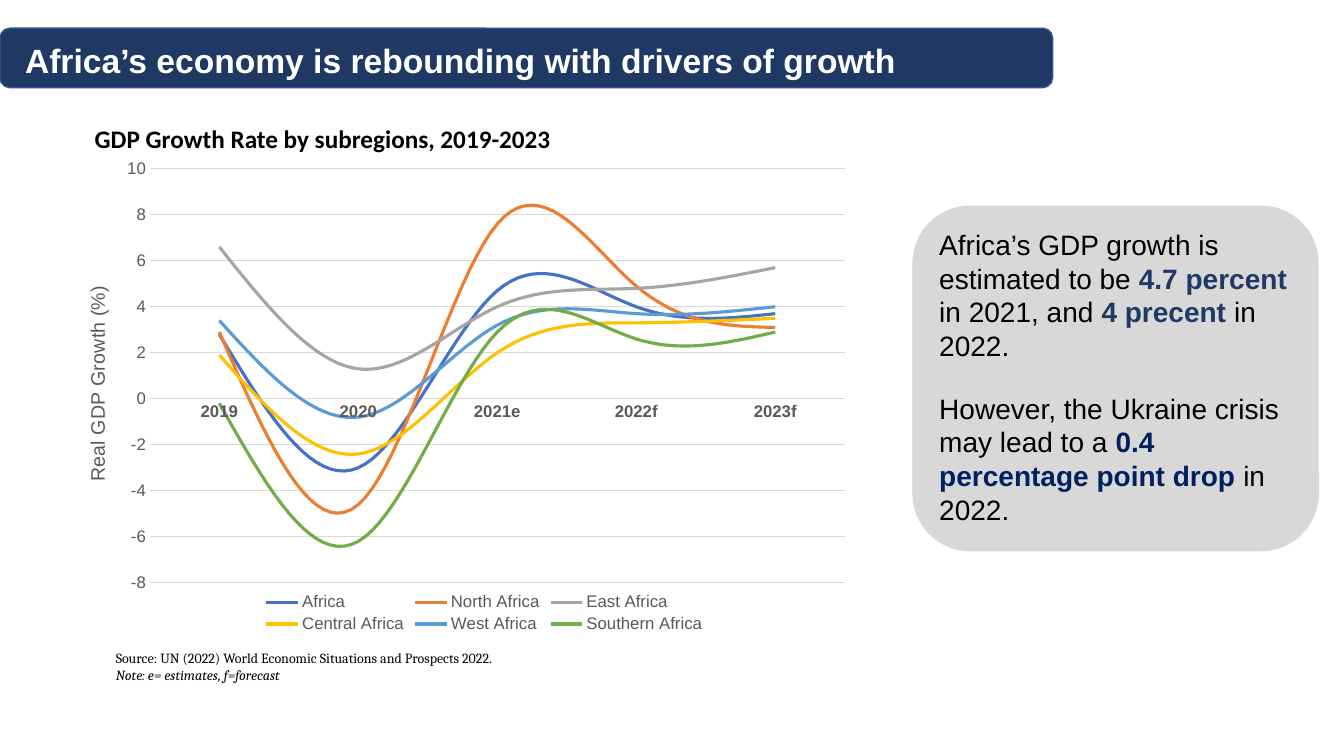
import pptx
import pptx.util
import pptx.chart.data
import pptx.dml.color
import pptx.enum.chart
import pptx.enum.shapes
import pptx.enum.text
import pptx.oxml
import pptx.oxml.ns

Inches, Pt = pptx.util.Inches, pptx.util.Pt
XL = pptx.enum.chart

COLORS = {"navy": "1F3864", "edge": "31538F", "white": "FFFFFF", "black": "000000",
          "panel": "D8D8D8", "deep": "002060", "label": "595959", "grid": "D9D9D9"}


def style(font, size, color="black", name="Arial", bold=False, italic=False):
    font.size, font.name, font.bold, font.italic = Pt(size), name, bold, italic
    font.color.rgb = pptx.dml.color.RGBColor.from_string(COLORS[color])


def set_layout(parent, **values):
    """Give a plot area or axis title a manual place, as shares of the chart."""
    for old in parent.findall(pptx.oxml.ns.qn("c:layout")):
        parent.remove(old)
    modes = '<c:layoutTarget val="inner"/>' if "w" in values else ""
    modes += '<c:xMode val="edge"/><c:yMode val="edge"/>'
    places = "".join(f'<c:{k} val="{v}"/>' for k, v in values.items())
    layout = pptx.oxml.parse_xml(
        f'<c:layout {pptx.oxml.ns.nsdecls("c")}><c:manualLayout>{modes}{places}'
        '</c:manualLayout></c:layout>')
    text = parent.find(pptx.oxml.ns.qn("c:tx"))
    parent.insert(0 if text is None else 1, layout)


prs = pptx.Presentation()
prs.slide_width, prs.slide_height = Inches(13.33), Inches(7.5)
s = prs.slides.add_slide(prs.slide_layouts[6])

# Title bar and text panel
panels = []
for box, fill in [((0, 0.28, 10.44, 0.59), "navy"), ((9.05, 2.04, 4.03, 3.43), "panel")]:
    sp = s.shapes.add_shape(pptx.enum.shapes.MSO_SHAPE.ROUNDED_RECTANGLE, *map(Inches, box))
    sp.shadow.inherit = False
    sp.fill.solid()
    sp.fill.fore_color.rgb = pptx.dml.color.RGBColor.from_string(COLORS[fill])
    sp.line.fill.background()
    panels.append(sp)
bar, panel = panels
bar.line.color.rgb = pptx.dml.color.RGBColor.from_string(COLORS["edge"])
bar.line.width = Pt(1)

# Growth chart
growth = {
    "Africa": ("4472C4", (2.8, -3, 4.7, 4, 3.7)),
    "North Africa": ("ED7D31", (2.9, -4.6, 7.6, 4.9, 3.1)),
    "East Africa": ("A5A5A5", (6.6, 1.3, 4, 4.8, 5.7)),
    "Central Africa": ("FFC000", (1.9, -2.4, 2, 3.3, 3.5)),
    "West Africa": ("5B9BD5", (3.4, -0.8, 3.2, 3.7, 4)),
    "Southern Africa": ("70AD47", (-0.2, -6.2, 2.9, 2.6, 2.9)),
}
data = pptx.chart.data.CategoryChartData()
data.categories = ["2019", "2020", "2021e", "2022f", "2023f"]
for region, (color, values) in growth.items():
    data.add_series(region, values)
chart = s.shapes.add_chart(XL.XL_CHART_TYPE.LINE, Inches(0.55), Inches(1.43),
                           Inches(8.51), Inches(4.89), data).chart
style(chart.font, 10)
chart.has_title = False
chart.plots[0].vary_by_categories = False
set_layout(chart.plots[0]._element.getparent(), x=0.11, y=0.05, w=0.81, h=0.84)
for series, (color, values) in zip(chart.plots[0].series, growth.values()):
    series.smooth = True
    series.marker.style = XL.XL_MARKER_STYLE.NONE
    series.format.line.width = Pt(2.25)
    series.format.line.color.rgb = pptx.dml.color.RGBColor.from_string(color)

# Axes and legend
years, rate = chart.category_axis, chart.value_axis
for axis in (years, rate):
    axis.major_tick_mark = axis.minor_tick_mark = XL.XL_TICK_MARK.NONE
    style(axis.tick_labels.font, 12, "label", bold=axis is years)
rate.minimum_scale, rate.maximum_scale, rate.major_unit = -8, 10, 2
rate.format.line.fill.background()
for line in (years.format.line, rate.major_gridlines.format.line):
    line.color.rgb = pptx.dml.color.RGBColor.from_string(COLORS["grid"])
    line.width = Pt(0.75)
rate.axis_title.text_frame.text = "Real GDP Growth (%)"
style(rate.axis_title.text_frame.paragraphs[0].runs[0].font, 14, "label")
set_layout(rate.axis_title._element, x=0.03, y=0.28)
chart.has_legend = True
chart.legend.position = XL.XL_LEGEND_POSITION.BOTTOM
chart.legend.include_in_layout = False
style(chart.legend.font, 12, "label")

# Slide title, chart heading and source note
title = dict(size=24, color="white", bold=True)
heading = dict(size=18, name="Calibri", bold=True)
source = dict(size=10, name="Cambria")
labels = [
    ((0.15, 0.35, 10.34, 0.5), [("Africa’s economy is rebounding with drivers of growth", title)]),
    ((0.84, 1.15, 6.72, 0.41), [("GDP Growth Rate by subregions, 2019-2023", heading)]),
    ((0.55, 6.39, 6.44, 0.44), [
        ("Source: UN (2022) World Economic Situations and Prospects 2022.", source),
        ("Note: e= estimates, f=forecast", dict(source, italic=True))]),
]
for box, lines in labels:
    tf = s.shapes.add_textbox(*map(Inches, box)).text_frame
    tf.word_wrap = True
    tf.text = "\n".join(text for text, look in lines)
    for p, (text, look) in zip(tf.paragraphs, lines):
        style(p.runs[0].font, **look)
        if look is heading:
            p.alignment = pptx.enum.text.PP_ALIGN.JUSTIFY
            p.line_spacing = 1.07
        if look["size"] == 10:
            tf.vertical_anchor = pptx.enum.text.MSO_ANCHOR.MIDDLE
            p._p.get_or_add_pPr().set("indent", str(Inches(0.5)))

# Panel text, with coloured runs in bold
messages = [
    [("Africa’s GDP growth is estimated to be ", "black"), ("4.7 percent ", "navy"),
     ("in 2021, and ", "black"), ("4 precent ", "navy"), ("in 2022.", "black")],
    [("However, the Ukraine crisis may lead to a ", "black"),
     ("0.4 percentage point drop ", "deep"), ("in 2022.", "black")],
]
tf = panel.text_frame
tf.word_wrap = True
tf.vertical_anchor = pptx.enum.text.MSO_ANCHOR.TOP
tf.text = "\n".join("" for message in messages)
for p, message in zip(tf.paragraphs, messages):
    p.alignment = pptx.enum.text.PP_ALIGN.LEFT
    for text, color in message:
        r = p.add_run()
        r.text = text
        style(r.font, 20, color, bold=color != "black")
tf.paragraphs[0].space_after = Pt(21)

prs.save("out.pptx")
